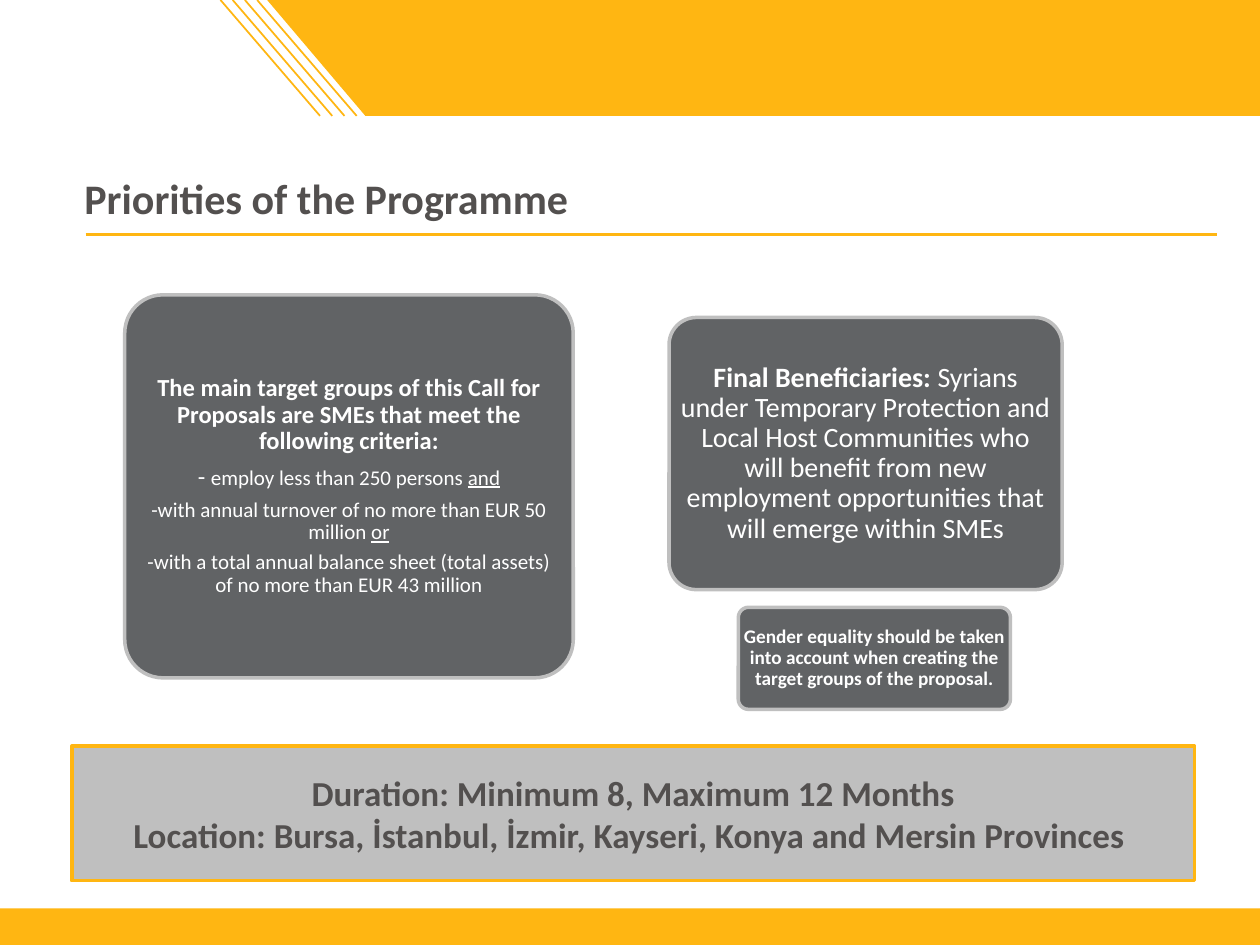
import pptx
import pptx.util
import pptx.dml.color
import pptx.enum.shapes
import pptx.enum.text
import pptx.oxml.ns
import lxml.etree
from pptx.util import Inches

YELLOW = "FFB612"
CHARCOAL = "616365"
SILVER = "BFBFBF"
DARK = "53504F"
WHITE = "FFFFFF"
SHAPES = pptx.enum.shapes.MSO_SHAPE
ANCHOR = pptx.enum.text.MSO_ANCHOR
ALIGN = pptx.enum.text.PP_ALIGN


def color(value):
    return pptx.dml.color.RGBColor.from_string(value)


def paint(shape, fill, line=None):
    shape.shadow.inherit = False
    shape.fill.solid()
    shape.fill.fore_color.rgb = color(fill)
    if line:
        shape.line.color.rgb = color(line)
        shape.line.width = pptx.util.Pt(2)
    else:
        shape.line.fill.background()


def set_frame(frame, anchor, side, edge):
    frame.word_wrap = True
    frame.auto_size = pptx.enum.text.MSO_AUTO_SIZE.NONE
    frame.vertical_anchor = anchor
    frame.margin_left = frame.margin_right = Inches(side)
    frame.margin_top = frame.margin_bottom = Inches(edge)


def set_font(font, size, shade, bold):
    font.name = "Calibri"
    font.size = pptx.util.Pt(size)
    font.color.rgb = color(shade)
    font.bold = bold


def add_box(page, kind, place, fill, line=None):
    box = page.shapes.add_shape(kind, *map(Inches, place))
    paint(box, fill, line)
    return box


def add_line(page, start, end, width):
    line = page.shapes.add_connector(
        pptx.enum.shapes.MSO_CONNECTOR.STRAIGHT, *map(Inches, start + end))
    line.line.color.rgb = color(YELLOW)
    line.line.width = pptx.util.Pt(width)
    properties = line._element.spPr
    lxml.etree.SubElement(properties, pptx.oxml.ns.qn("a:effectLst"))


def add_header(page):
    outline = page.shapes.build_freeform(Inches(2.12), 0)
    outline.add_line_segments(
        [(Inches(x), Inches(y)) for x, y in ((10, 0), (10, 0.92), (2.9, 0.92))])
    paint(outline.convert_to_shape(), YELLOW)
    for index in range(4):
        left = 1.75 + 0.097 * index
        add_line(page, (left, 0), (left + 0.79, 0.92), 1)


def add_title(page, text):
    title = page.shapes.title
    title.left, title.top, title.width, title.height = map(
        Inches, (0.57, 0.99, 9.15, 0.83))
    title.text_frame.text = text
    set_frame(title.text_frame, ANCHOR.BOTTOM, 0.1, 0.05)
    para = title.text_frame.paragraphs[0]
    para.alignment = ALIGN.LEFT
    set_font(para.font, 24, DARK, True)


def add_card(page, place, inset, content):
    card = add_box(page, SHAPES.ROUNDED_RECTANGLE, place, CHARCOAL, SILVER)
    card.adjustments[0] = 0.1
    frame = card.text_frame
    set_frame(frame, ANCHOR.MIDDLE, inset, 0.02)
    for index, spans in enumerate(content):
        para = frame.add_paragraph() if index else frame.paragraphs[0]
        para.alignment = ALIGN.CENTER
        para.line_spacing = 0.9
        para.space_after = pptx.util.Pt(0.35 * spans[0][1])
        for text, size, style in spans:
            span = para.add_run()
            span.text = text
            set_font(span.font, size, WHITE, style == "bold")
            if style == "underline":
                span.font.underline = True


def add_banner(page, lines):
    banner = add_box(page, SHAPES.RECTANGLE, (0.57, 5.92, 8.91, 1.07), SILVER, YELLOW)
    frame = banner.text_frame
    frame.text = "\n".join(lines)
    set_frame(frame, ANCHOR.MIDDLE, 0.1, 0.05)
    for para in frame.paragraphs:
        para.alignment = ALIGN.CENTER
        set_font(para.font, 20, DARK, True)


def main():
    deck = pptx.Presentation()
    deck.slide_width, deck.slide_height = Inches(10), Inches(7.5)
    page = deck.slides.add_slide(deck.slide_layouts[5])
    add_header(page)
    add_box(page, SHAPES.RECTANGLE, (0, 7.21, 10, 0.29), YELLOW)
    add_line(page, (0.68, 1.86), (9.66, 1.86), 1.5)
    add_title(page, "Priorities of the Programme")
    add_card(page, (0.99, 2.34, 3.56, 3.04), 0.03, [
        [("The main target groups of this Call for Proposals are SMEs "
          "that meet the following criteria:", 14, "bold")],
        [("- ", 14, "plain"), ("employ less than 250 persons ", 12, "plain"),
         ("and", 12, "underline")],
        [("-with annual turnover of no more than EUR 50 million ", 12, "plain"),
         ("or", 12, "underline")],
        [("-with a total annual balance sheet (total assets) "
          "of no more than EUR 43 million", 12, "plain")],
    ])
    add_card(page, (5.86, 4.82, 2.16, 0.81), 0.02, [
        [("Gender equality should be taken into account when creating "
          "the target groups of the proposal.", 11, "bold")],
    ])
    add_card(page, (5.31, 2.52, 3.12, 2.16), 0.03, [
        [("Final Beneficiaries: ", 16, "bold"),
         ("Syrians under Temporary Protection and Local Host Communities "
          "who will benefit from new employment opportunities that will "
          "emerge within SMEs", 16, "plain")],
    ])
    add_banner(page, [
        "Duration: Minimum 8, Maximum 12 Months",
        "Location: Bursa, İstanbul, İzmir, Kayseri, Konya and Mersin Provinces ",
    ])
    deck.save("out.pptx")


if __name__ == "__main__":
    main()
